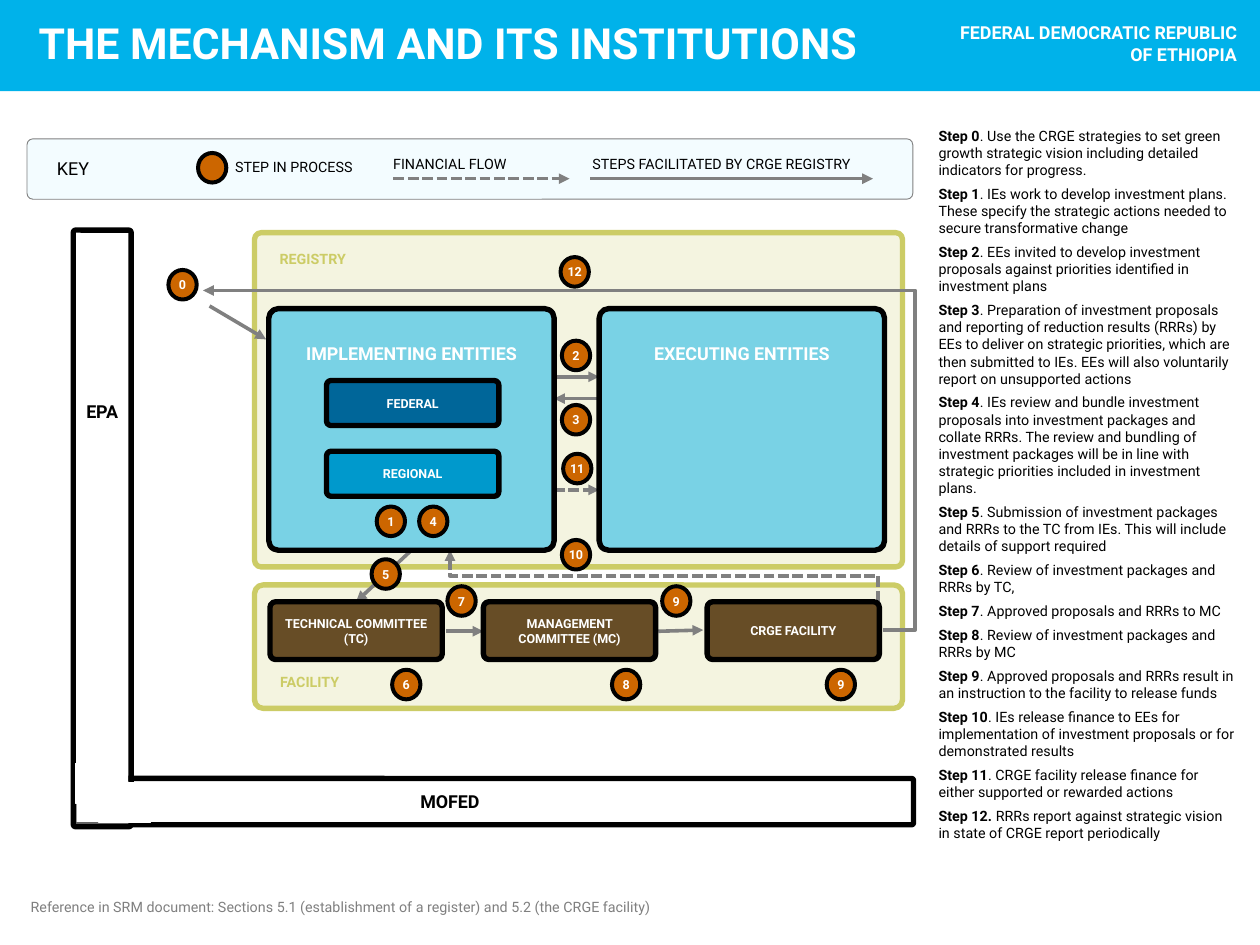
import dataclasses

import pptx
import pptx.dml.color
import pptx.enum.dml
import pptx.enum.shapes
import pptx.enum.text
import pptx.oxml.ns
import pptx.oxml.xmlchemy
import pptx.util
from lxml import etree

qn = pptx.oxml.ns.qn
SHAPE = pptx.enum.shapes.MSO_SHAPE
LINK = pptx.enum.shapes.MSO_CONNECTOR
ALIGN = pptx.enum.text.PP_ALIGN
ANCHOR = pptx.enum.text.MSO_ANCHOR
COLS, ROWS = 98, 73.5  # grid cells are a tenth of an inch square


@dataclasses.dataclass(frozen=True)
class Theme:
    font: str = "Roboto"
    title: float = 24
    heading: float = 10
    body: float = 8
    small: float = 7
    black: str = "000000"
    white: str = "FFFFFF"
    sky: str = "00B2EA"
    pale: str = "E1F8FF"
    olive: str = "CCCC66"
    grey: str = "808080"
    caption: str = "7F7F7F"
    orange: str = "CC6600"
    brown: str = "674D26"
    navy: str = "006699"
    blue: str = "0099CC"


T = Theme()

STEPS = [
    ("Step 0", ". Use the CRGE strategies to set green growth strategic vision including detailed indicators for progress."),
    ("Step 1", ". IEs work to develop investment plans. These specify the strategic actions needed to secure transformative change"),
    ("Step 2", ". EEs invited to develop investment proposals against priorities identified in investment plans"),
    ("Step 3", ". Preparation of investment proposals and reporting of reduction results (RRRs) by EEs to deliver on strategic "
     "priorities, which are then submitted to IEs. EEs will also voluntarily report on unsupported actions"),
    ("Step 4", ". IEs review and bundle investment proposals into investment packages and collate RRRs. The review and bundling of "
     "investment packages will be in line with strategic priorities included in investment plans."),
    ("Step 5", ". Submission of investment packages and RRRs to the TC from IEs. This will include details of support required"),
    ("Step 6", ". Review of investment packages and RRRs by TC,"),
    ("Step 7", ". Approved proposals and RRRs to MC"),
    ("Step 8", ". Review of investment packages and RRRs by MC"),
    ("Step 9", ". Approved proposals and RRRs result in an instruction to the facility to release funds"),
    ("Step 10", ". IEs release finance to EEs for implementation of investment proposals or for demonstrated results"),
    ("Step 11", ". CRGE facility release finance for either supported or rewarded actions"),
    ("Step 12. ", "RRRs report against strategic vision in state of CRGE report periodically"),
]

# Step number, column and row of its circle
MARKERS = [
    ("1", 29.3, 39.4), ("4", 32.6, 39.4), ("2", 43.7, 26.5), ("3", 43.7, 31.5),
    ("5", 28.9, 43.5), ("6", 30.5, 52.1), ("8", 47.6, 52.1), ("9", 64.3, 52.1),
    ("7", 34.8, 45.6), ("9", 51.5, 45.6), ("0", 13.1, 21), ("12", 43.6, 20),
    ("10", 43.7, 42), ("11", 43.8, 35.3),
]


def cells(*values):
    return [pptx.util.Inches(v / 10) for v in values]


def rgb(color):
    return pptx.dml.color.RGBColor.from_string(color)


def write(tf, paragraphs, size=T.body, color=T.black, bold=False, align=ALIGN.LEFT,
          anchor=ANCHOR.TOP, inset=(1, 0.5, 1, 0.5), wrap=True):
    """Each paragraph is a string, or a pair of a bold lead and plain text."""
    tf.word_wrap, tf.vertical_anchor = wrap, anchor
    tf.margin_left, tf.margin_top, tf.margin_right, tf.margin_bottom = cells(*inset)
    for i, content in enumerate(paragraphs):
        p = tf.add_paragraph() if i else tf.paragraphs[0]
        p.alignment = align
        if i:
            p.space_before = pptx.util.Pt(size * 0.47)
        runs = [(content, bold)] if isinstance(content, str) else zip(content, (True, False))
        for text, weight in runs:
            r = p.add_run()
            r.text = text
            r.font.name, r.font.size, r.font.bold = T.font, pptx.util.Pt(size), weight
            r.font.color.rgb = rgb(color)


def label(slide, at, *paragraphs, **style):
    write(slide.shapes.add_textbox(*cells(*at)).text_frame, paragraphs, **style)


def box(slide, at, fill, line=None, width=3, kind=SHAPE.ROUNDED_RECTANGLE,
        radius=None, opacity=None, text=None, **style):
    sp = slide.shapes.add_shape(kind, *cells(*at))
    sp.shadow.inherit = False
    sp.fill.solid()
    sp.fill.fore_color.rgb = rgb(fill)
    if opacity:
        color = sp.element.spPr.find(qn("a:solidFill"))[0]
        etree.SubElement(color, qn("a:alpha")).set("val", str(opacity * 1000))
    if line:
        sp.line.color.rgb = rgb(line)
        sp.line.width = pptx.util.Pt(width)
    else:
        sp.line.fill.background()
    if radius is not None:
        sp.adjustments[0] = radius
    if text:
        write(sp.text_frame, [text], **style)


def arrow(slide, begin, end, dashed=False, bend=None, vertical=False):
    """Straight arrow, or an elbow when bend gives the share of its middle leg."""
    if vertical:  # leaves upwards: lay the elbow flat, then turn it
        cx, cy = (begin[0] + end[0]) / 2, (begin[1] + end[1]) / 2
        begin, end = [(cx - (y - cy), cy + (x - cx)) for x, y in (begin, end)]
    kind = LINK.STRAIGHT if bend is None else LINK.ELBOW
    c = slide.shapes.add_connector(kind, *cells(*begin, *end))
    c.line.color.rgb = rgb(T.grey)
    c.line.width = pptx.util.Pt(2)
    if dashed:
        c.line.dash_style = pptx.enum.dml.MSO_LINE.SQUARE_DOT
    spPr = c.element.spPr
    etree.SubElement(spPr.find(qn("a:ln")), qn("a:tailEnd")).set("type", "triangle")
    etree.SubElement(spPr, qn("a:effectLst"))
    if vertical:
        spPr.find(qn("a:xfrm")).set("rot", str(270 * 60000))
    if bend is not None:
        guide = etree.SubElement(spPr.find(qn("a:prstGeom")).find(qn("a:avLst")), qn("a:gd"))
        guide.set("name", "adj1")
        guide.set("fmla", f"val {round(bend * 100000)}")


def marker(slide, number, col, row):
    box(slide, (col, row, 2.2, 2.3), T.orange, T.black, 2.25, SHAPE.OVAL, text=number,
        size=T.small, color=T.white, bold=True, align=ALIGN.CENTER,
        anchor=ANCHOR.MIDDLE, inset=(0, 0, 0, 0), wrap=False)


def unit(slide, at, fill, text):
    box(slide, at, fill, T.black, radius=0.1, text=text, size=T.small, color=T.white,
        bold=True, align=ALIGN.CENTER, anchor=ANCHOR.MIDDLE, inset=(0.7, 0, 0.7, 0))


def header(slide):
    box(slide, (0, 0, COLS, 7.1), T.sky, kind=SHAPE.RECTANGLE)
    label(slide, (3, 1.3, 78.3, 4), "THE MECHANISM AND ITS INSTITUTIONS", size=T.title,
          color=T.white, bold=True, anchor=ANCHOR.BOTTOM, inset=(0, 0, 0, 0))
    label(slide, (73.4, 1.7, 22.8, 5), "FEDERAL DEMOCRATIC REPUBLIC OF ETHIOPIA",
          size=T.heading, color=T.white, bold=True, align=ALIGN.RIGHT, inset=(0, 0, 0, 0))


def key(slide):
    box(slide, (2.1, 10.8, 68.9, 4.7), T.pale, T.grey, 0.5, radius=0.1, opacity=39,
        text="KEY", size=T.heading, inset=(2.2, 1.3, 0, 0))
    marker(slide, None, 15.4, 11.9)
    label(slide, (17.3, 11.8, 18.3, 2.4), "STEP IN PROCESS")
    label(slide, (29.6, 11.6, 27.6, 2.4), "FINANCIAL FLOW")
    label(slide, (45.1, 11.6, 27.6, 2.4), "STEPS FACILITATED BY CRGE REGISTRY")
    arrow(slide, (30.6, 13.9), (44.3, 13.9), dashed=True)
    arrow(slide, (45.9, 13.9), (67.9, 13.9))


def diagram(slide):
    # Frames
    box(slide, (5.75, 60.55, 65.3, 3.6), T.white, T.black, radius=0.04, opacity=39,
        text="MOFED", size=T.heading, bold=True, anchor=ANCHOR.MIDDLE, inset=(26.9, 0, 0, 0))
    for text, row, height, radius, drop in (("REGISTRY", 18.1, 26, 0.02, 1.2),
                                            ("FACILITY", 45.5, 9.6, 0.07, 6.7)):
        box(slide, (19.8, row, 50.4, height), T.olive, T.olive, radius=radius, opacity=20,
            text=text, color=T.olive, bold=True, inset=(1.8, drop, 0, 0))

    # Flows behind the boxes
    arrow(slide, (16.3, 23.8), (20.7, 26.4))
    arrow(slide, (43.1, 29.3), (46.6, 29.3))
    arrow(slide, (46.6, 31), (43.1, 31))
    arrow(slide, (43.1, 38.1), (46.6, 38.1), dashed=True)
    arrow(slide, (68.3, 46.8), (35, 42.8), dashed=True, bend=0.5, vertical=True)
    arrow(slide, (34.7, 49.1), (37.6, 49.1))
    arrow(slide, (51.2, 49.1), (54.7, 49))
    arrow(slide, (32, 42.8), (27.7, 46.8))

    # Institutions
    box(slide, (5.7, 17.9, 4.5, 46.4), T.white, T.black, radius=0.04, opacity=39, text="EPA",
        size=T.heading, bold=True, align=ALIGN.CENTER, inset=(0, 13.2, 0, 0))
    for text, col in (("IMPLEMENTING ENTITIES", 20.9), ("EXECUTING ENTITIES", 46.6)):
        box(slide, (col, 24, 22.2, 18.8), T.sky, T.black, radius=0.04, opacity=50, text=text,
            size=T.heading, color=T.white, bold=True, align=ALIGN.CENTER, inset=(0, 2.4, 0, 0))
    unit(slide, (25.4, 29.6, 13.4, 3.5), T.navy, "FEDERAL")
    unit(slide, (25.4, 35.1, 13.4, 3.5), T.blue, "REGIONAL")
    for text, col in (("TECHNICAL COMMITTEE (TC)", 21), ("MANAGEMENT COMMITTEE (MC)", 37.6),
                      ("CRGE FACILITY", 55)):
        unit(slide, (col, 46.8, 13.4, 4.5), T.brown, text)

    # Step numbers and the reporting loop
    for number, col, row in MARKERS:
        marker(slide, number, col, row)
    arrow(slide, (68.7, 49), (15.8, 22.6), bend=-0.047)

    # White patches that open the corner between EPA and MOFED
    for col, row in ((5.9, 59.4), (7.7, 60.9)):
        box(slide, (col, row, 4, 3.1), T.white, T.white, 0.75, SHAPE.RECTANGLE)


def main():
    prs = pptx.Presentation()
    prs.slide_width, prs.slide_height = cells(COLS, ROWS)
    slide = prs.slides.add_slide(prs.slide_layouts[6])
    header(slide)
    key(slide)
    diagram(slide)
    label(slide, (71.6, 9.2, 26, 58), *STEPS, inset=(1.4, 0.7, 1.4, 0.7))
    label(slide, (1.4, 69.4, 59, 2.4), "Reference in SRM document: Sections 5.1 "
          "(establishment of a register) and 5.2 (the CRGE facility)", color=T.caption)
    prs.save("out.pptx")


if __name__ == "__main__":
    main()
